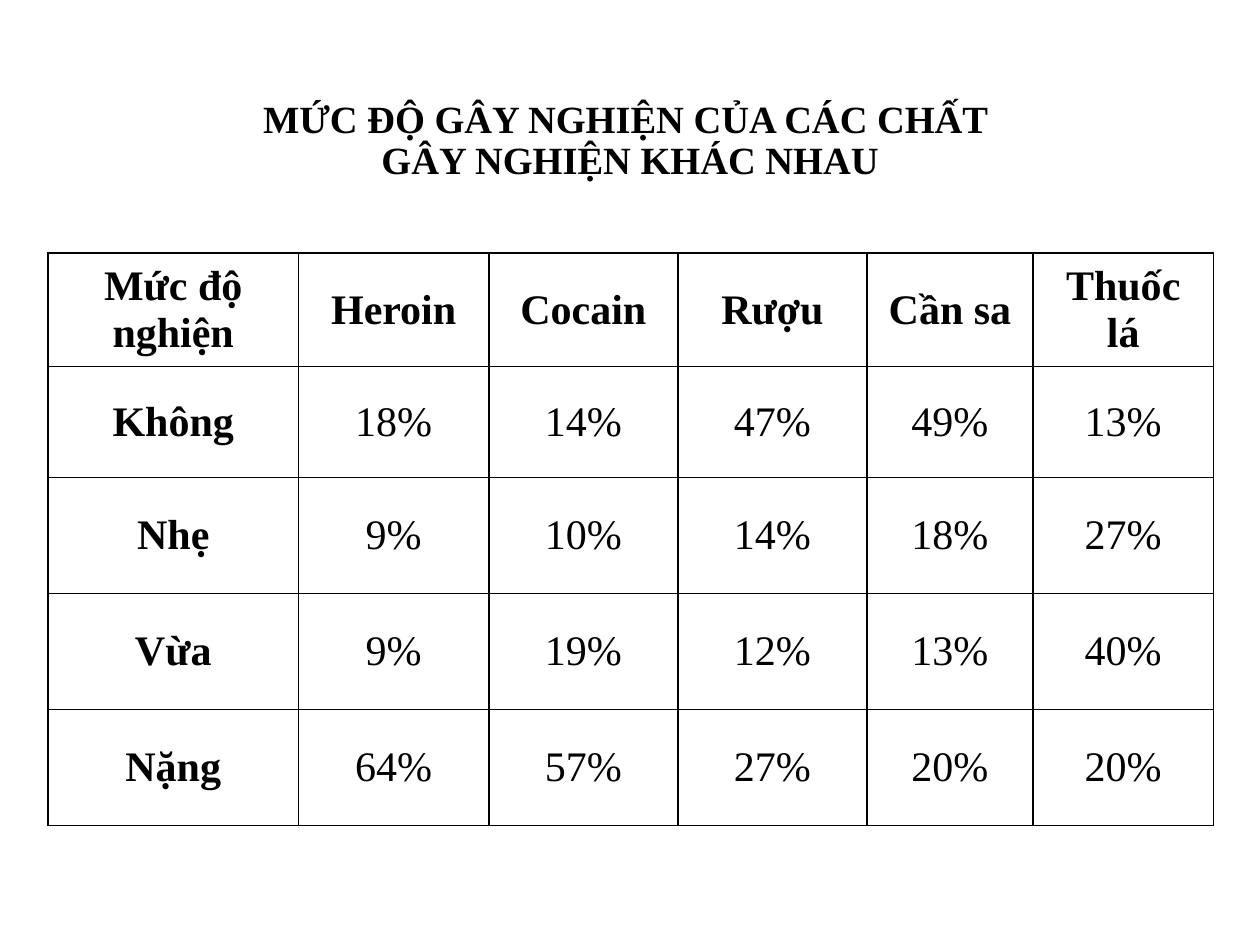
from dataclasses import dataclass

import pptx
import pptx.dml.color
import pptx.enum.text
import pptx.oxml
import pptx.oxml.ns
import pptx.util


@dataclass(frozen=True)
class Theme:
    font: str = "Times New Roman"
    ink: str = "000000"
    paper: str = "FFFFFF"
    title_size: int = 22
    table_size: int = 24
    border: float = 1


@dataclass(frozen=True)
class Box:
    """Place and size in percent of the slide's width and height."""
    left: float
    top: float
    width: float
    height: float


@dataclass(frozen=True)
class Level:
    name: str
    shares: tuple[int, ...]
    height: float


THEME = Theme()
WIDTH, HEIGHT = pptx.util.Inches(10), pptx.util.Inches(7.5)

TITLE = "MỨC ĐỘ GÂY NGHIỆN CỦA CÁC CHẤT \vGÂY NGHIỆN KHÁC NHAU"
TITLE_BOX = Box(6.9, 5.33, 86.2, 19.33)

COLUMNS = (
    ("Mức độ nghiện", 19.9),
    ("Heroin", 15.1),
    ("Cocain", 15),
    ("Rượu", 15),
    ("Cần sa", 13.2),
    ("Thuốc lá", 14.3),
)
HEADER_HEIGHT = 12
LEVELS = (
    Level("Không", (18, 14, 47, 49, 13), 11.73),
    Level("Nhẹ", (9, 10, 14, 18, 27), 12.27),
    Level("Vừa", (9, 19, 12, 13, 40), 12.27),
    Level("Nặng", (64, 57, 27, 20, 20), 12.27),
)
TABLE_BOX = Box(3.8, 26.8, sum(width for _, width in COLUMNS),
                HEADER_HEIGHT + sum(level.height for level in LEVELS))


def across(percent: float) -> int:
    return round(WIDTH * percent / 100)


def down(percent: float) -> int:
    return round(HEIGHT * percent / 100)


def place(box: Box) -> tuple[int, int, int, int]:
    return across(box.left), down(box.top), across(box.width), down(box.height)


def style(p, size: int, bold: bool) -> None:
    p.alignment = pptx.enum.text.PP_ALIGN.CENTER
    p.font.name = THEME.font
    p.font.size = pptx.util.Pt(size)
    p.font.bold = bold
    p.font.color.rgb = pptx.dml.color.RGBColor.from_string(THEME.ink)


def add_borders(cell) -> None:
    """Rule all four sides; the lines must precede the fill in the XML."""
    props = cell._tc.get_or_add_tcPr()
    for i, side in enumerate(("lnL", "lnR", "lnT", "lnB")):
        props.insert(i, pptx.oxml.parse_xml(
            f'<a:{side} {pptx.oxml.ns.nsdecls("a")} w="{pptx.util.Pt(THEME.border)}">'
            f'<a:solidFill><a:srgbClr val="{THEME.ink}"/></a:solidFill></a:{side}>'))


def fill_cell(cell, text: str, bold: bool) -> None:
    cell.text = text
    cell.vertical_anchor = pptx.enum.text.MSO_ANCHOR.MIDDLE
    cell.fill.solid()
    cell.fill.fore_color.rgb = pptx.dml.color.RGBColor.from_string(THEME.paper)
    style(cell.text_frame.paragraphs[0], THEME.table_size, bold)
    add_borders(cell)


def add_title(s) -> None:
    tf = s.shapes.add_textbox(*place(TITLE_BOX)).text_frame
    tf.word_wrap = True
    tf.vertical_anchor = pptx.enum.text.MSO_ANCHOR.MIDDLE
    p = tf.paragraphs[0]
    p.text = TITLE
    p.line_spacing = 0.9
    style(p, THEME.title_size, True)


def add_levels_table(s) -> None:
    rows = [[name for name, _ in COLUMNS]]
    rows += [[level.name, *(f"{share}%" for share in level.shares)] for level in LEVELS]
    heights = [HEADER_HEIGHT, *(level.height for level in LEVELS)]
    table = s.shapes.add_table(len(rows), len(COLUMNS), *place(TABLE_BOX)).table
    for column, (_, width) in zip(table.columns, COLUMNS):
        column.width = across(width)
    for i, (texts, height) in enumerate(zip(rows, heights)):
        table.rows[i].height = down(height)
        for j, text in enumerate(texts):
            fill_cell(table.cell(i, j), text, bold=i == 0 or j == 0)


def main() -> None:
    prs = pptx.Presentation()
    prs.slide_width, prs.slide_height = WIDTH, HEIGHT
    s = prs.slides.add_slide(prs.slide_layouts[6])
    add_title(s)
    add_levels_table(s)
    prs.save("out.pptx")


if __name__ == "__main__":
    main()
